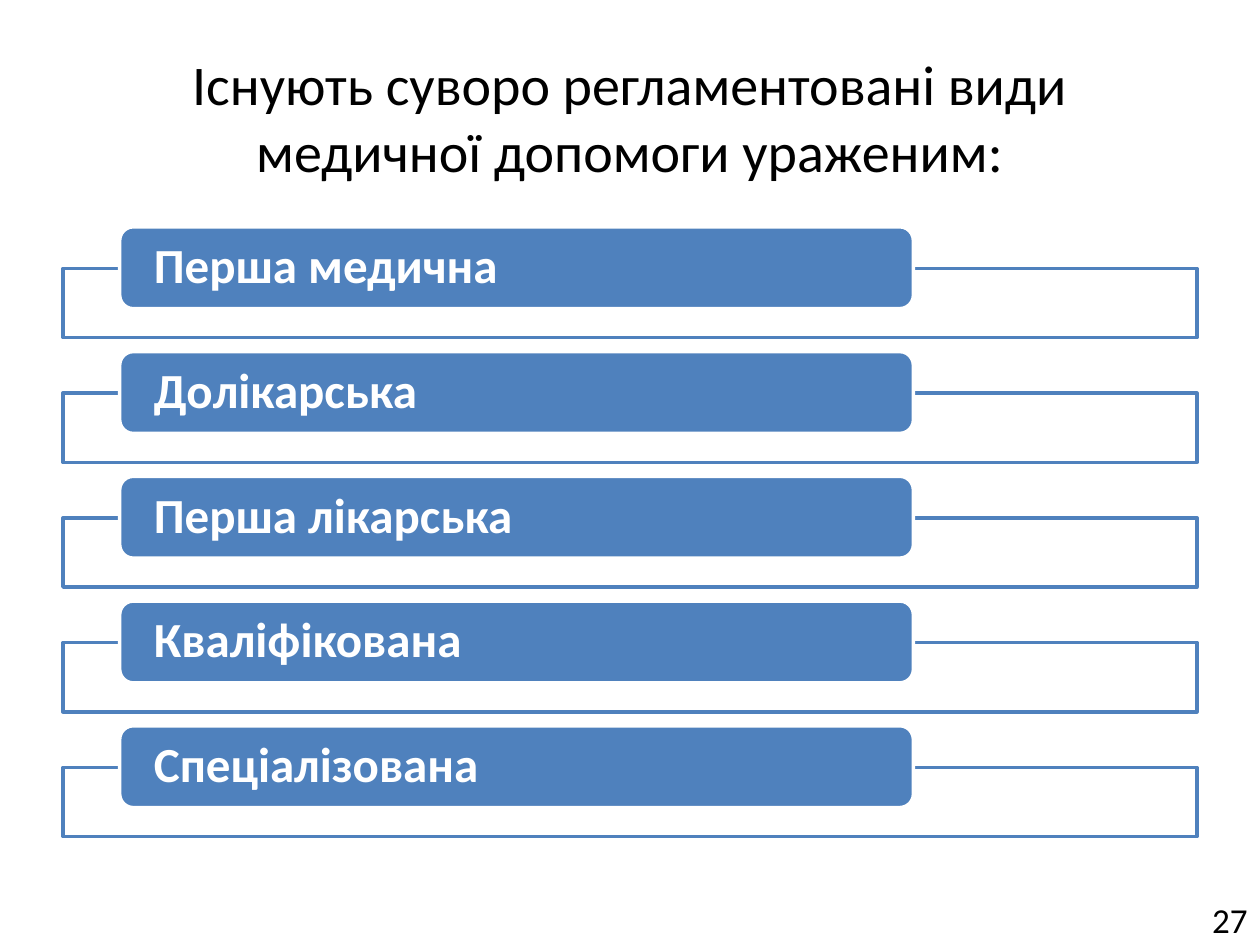
from lxml import etree
from pptx import Presentation, util as u
from pptx.dml.color import RGBColor
from pptx.enum import shapes, text
from pptx.oxml import ns

BLUE = RGBColor(0x4F, 0x81, 0xBD)
WHITE = RGBColor(0xFF, 0xFF, 0xFF)
BLACK = RGBColor(0, 0, 0)

deck = Presentation()
deck.slide_width, deck.slide_height = u.Inches(10), u.Inches(7.5)
slide = deck.slides.add_slide(deck.slide_layouts[5])

LEFT, WIDE = 0.5, 9
TOP, STEP = 1.8, 0.99
KINDS = ["Перша медична", "Долікарська", "Перша лікарська",
         "Кваліфікована", "Спеціалізована"]


def write(shape, words, size, color, align, bold=False):
    frame = shape.text_frame
    frame.word_wrap = True
    frame.vertical_anchor = text.MSO_ANCHOR.MIDDLE
    para = frame.paragraphs[0]
    para.alignment = align
    run = para.add_run()
    run.text = words
    run.font.name, run.font.size = "Calibri", u.Pt(size)
    run.font.bold, run.font.color.rgb = bold, color
    return frame


def block(kind, box, fill, line):
    shape = slide.shapes.add_shape(kind, *map(u.Inches, box))
    shape.shadow.inherit = False
    shape.fill.solid()
    shape.fill.fore_color.rgb = fill
    shape.line.color.rgb, shape.line.width = line, u.Pt(2)
    return shape


title = slide.shapes.title
title.left, title.top = u.Inches(LEFT), u.Inches(0.3)
title.width, title.height = u.Inches(WIDE), u.Inches(1.25)
write(title, "Існують суворо регламентовані види медичної допомоги ураженим:",
      32, BLACK, text.PP_ALIGN.CENTER)

for row, kind in enumerate(KINDS):
    top = TOP + row * STEP
    frame = block(shapes.MSO_SHAPE.RECTANGLE, (LEFT, top + 0.33, WIDE, 0.55), WHITE, BLUE)
    tint = frame.fill._xPr.find(ns.qn("a:solidFill"))[0]
    etree.SubElement(tint, ns.qn("a:alpha"), val="90000")

    label = block(shapes.MSO_SHAPE.ROUNDED_RECTANGLE,
                  (LEFT + 0.05 * WIDE, top, 0.7 * WIDE, 0.65), BLUE, WHITE)
    body = write(label, kind, 28, WHITE, text.PP_ALIGN.LEFT, True)
    body.margin_left = body.margin_right = u.Inches(0.24)
    body.margin_top = body.margin_bottom = 0
    body.paragraphs[0].line_spacing = 0.9

page = slide.shapes.add_textbox(*map(u.Inches, (7.67, 7.1, 2.33, 0.4)))
write(page, "27", 20, BLACK, text.PP_ALIGN.RIGHT)

deck.save("out.pptx")
